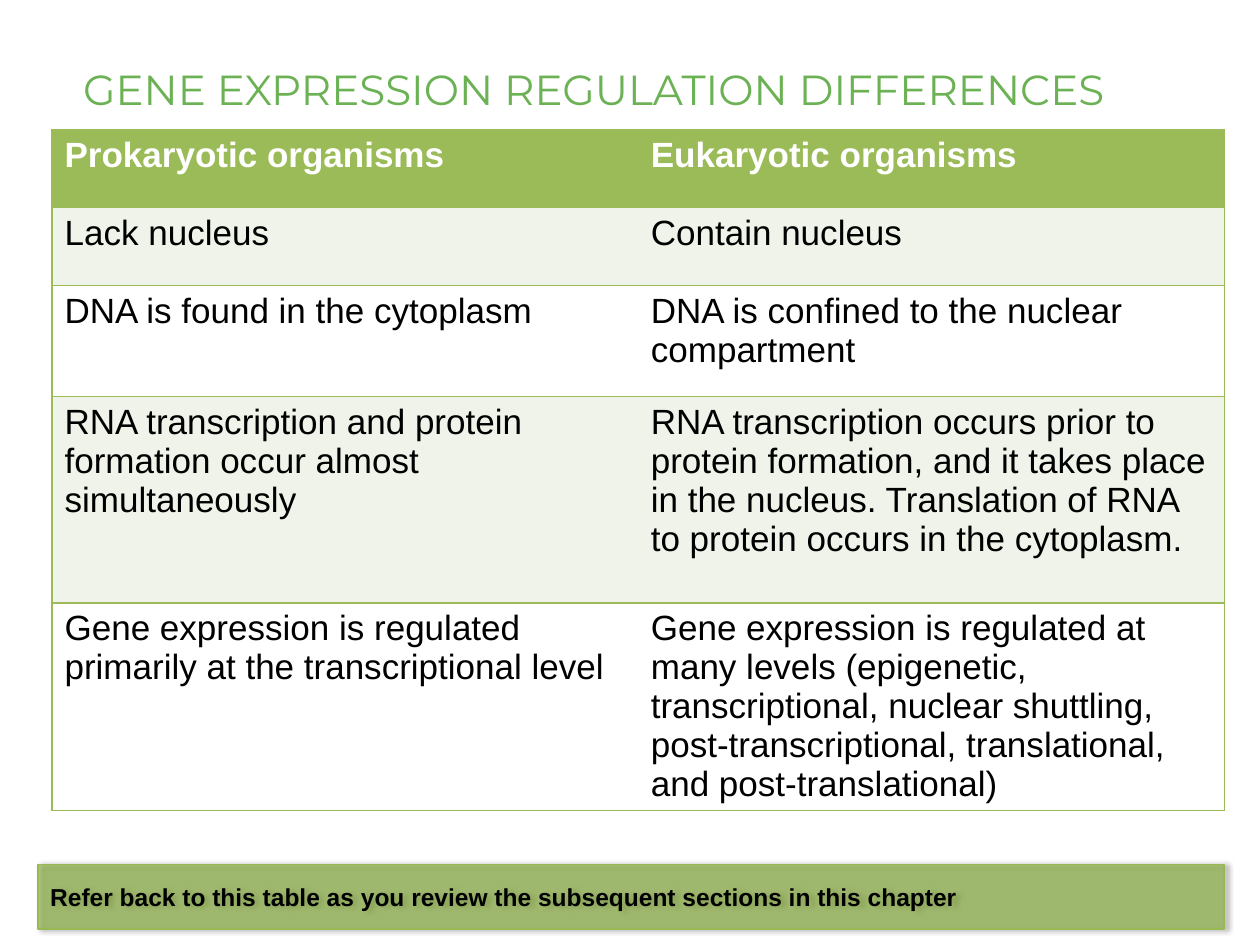
from lxml.etree import SubElement
from pptx import Presentation
from pptx.dml.color import RGBColor
from pptx.enum.shapes import MSO_SHAPE
from pptx.enum.text import MSO_ANCHOR, PP_ALIGN
from pptx.oxml.ns import qn
from pptx.util import Pt

COLORS = {
    "title": "6CB255",
    "header": "9BBB59",
    "band": "EFF3E9",
    "white": "FFFFFF",
    "black": "000000",
    "note_fill": "72A510",
    "note_line": "97B853",
}

COMPARISON = [
    ("Prokaryotic organisms", "Eukaryotic organisms"),
    ("Lack nucleus", "Contain nucleus"),
    ("DNA is found in the cytoplasm",
     "DNA is confined to the nuclear compartment"),
    ("RNA transcription and protein formation occur almost simultaneously",
     "RNA transcription occurs prior to protein formation, and it takes place "
     "in the nucleus. Translation of RNA to protein occurs in the cytoplasm."),
    ("Gene expression is regulated primarily at the transcriptional level",
     "Gene expression is regulated at many levels (epigenetic, transcriptional, "
     "nuclear shuttling, post-transcriptional, translational, "
     "and post-translational)"),
]
ROW_HEIGHTS = [44.6, 44.6, 63.3, 118, 118]
COLUMN_WIDTH = 335


def add_text(paragraph, text, size, color, font="Arial", bold=False):
    run = paragraph.add_run()
    run.text = text
    run.font.name = font
    run.font.size = Pt(size)
    run.font.bold = bold
    run.font.color.rgb = RGBColor.from_string(COLORS[color])


def add_border(cell, side, visible):
    line = SubElement(cell._tc.get_or_add_tcPr(), qn(f"a:ln{side}"), w=str(Pt(1)))
    if visible:
        fill = SubElement(line, qn("a:solidFill"))
        SubElement(fill, qn("a:srgbClr"), val=COLORS["header"])
    else:
        SubElement(line, qn("a:noFill"))


prs = Presentation()
prs.slide_width, prs.slide_height = Pt(720), Pt(540)
slide = prs.slides.add_slide(prs.slide_layouts[5])

title = slide.shapes.title
title.left, title.top, title.width, title.height = Pt(40.3), Pt(16.5), Pt(635), Pt(52)
title.text_frame.vertical_anchor = MSO_ANCHOR.BOTTOM
heading = title.text_frame.paragraphs[0]
heading.alignment = PP_ALIGN.LEFT
add_text(heading, "GENE EXPRESSION REGULATION DIFFERENCES", 24, "title", "Montserrat")

table = slide.shapes.add_table(
    len(COMPARISON), 2, Pt(29.7), Pt(74), Pt(2 * COLUMN_WIDTH), Pt(sum(ROW_HEIGHTS))
).table
for column in table.columns:
    column.width = Pt(COLUMN_WIDTH)

for row_index, (texts, height) in enumerate(zip(COMPARISON, ROW_HEIGHTS)):
    table.rows[row_index].height = Pt(height)
    is_header = row_index == 0
    fill_color = "header" if is_header else "band" if row_index % 2 else "white"
    for column_index, text in enumerate(texts):
        cell = table.cell(row_index, column_index)
        for side in "LRTB":
            add_border(cell, side, side in ("LTB", "RTB")[column_index])
        cell.fill.solid()
        cell.fill.fore_color.rgb = RGBColor.from_string(COLORS[fill_color])
        add_text(cell.text_frame.paragraphs[0], text, 20,
                 "white" if is_header else "black", bold=is_header)

note = slide.shapes.add_shape(MSO_SHAPE.RECTANGLE, Pt(21.6), Pt(494), Pt(678), Pt(37))
note.fill.solid()
note.fill.fore_color.rgb = RGBColor.from_string(COLORS["note_fill"])
note_color = note._element.spPr.find(qn("a:solidFill")).find(qn("a:srgbClr"))
SubElement(note_color, qn("a:alpha"), val="50000")
note.line.color.rgb = RGBColor.from_string(COLORS["note_line"])
note.line.width = Pt(1)
note.shadow.inherit = False
shadow = SubElement(
    note._element.spPr.find(qn("a:effectLst")), qn("a:outerShdw"),
    blurRad=str(Pt(3.1)), dist=str(Pt(1.8)), dir="0", rotWithShape="0",
)
shadow_color = SubElement(shadow, qn("a:srgbClr"), val=COLORS["black"])
SubElement(shadow_color, qn("a:alpha"), val="40000")

note.text_frame.word_wrap = True
note.text_frame.vertical_anchor = MSO_ANCHOR.MIDDLE
reminder = note.text_frame.paragraphs[0]
reminder.alignment = PP_ALIGN.LEFT
add_text(reminder,
         "Refer back to this table as you review the subsequent sections in this chapter",
         14, "black", bold=True)

prs.save("out.pptx")
